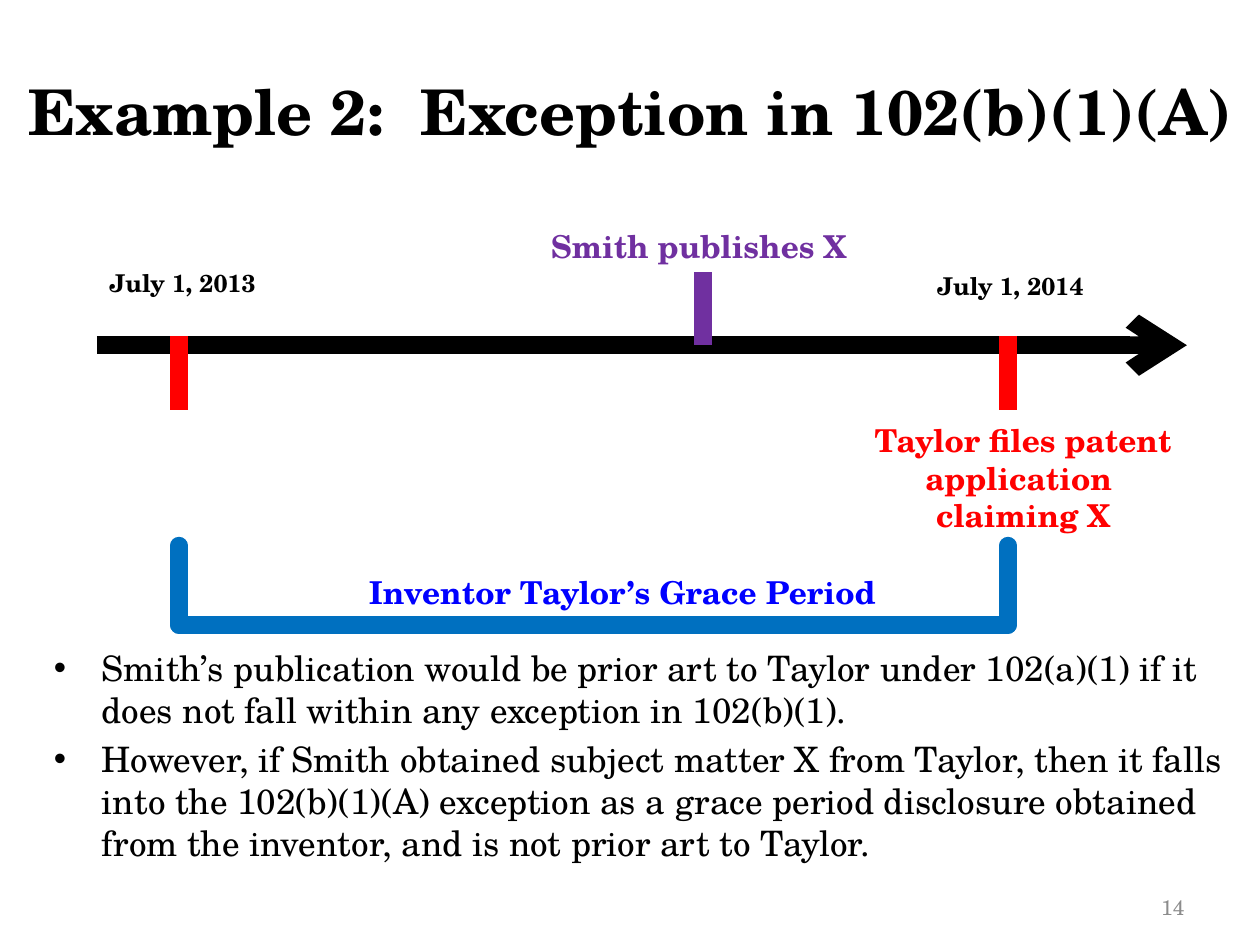
"""Build the patent grace period timeline slide."""
from lxml import etree
from pptx import Presentation
from pptx.dml.color import RGBColor
from pptx.enum.shapes import MSO_CONNECTOR
from pptx.enum.text import MSO_ANCHOR, PP_ALIGN
from pptx.oxml.ns import qn
from pptx.util import Inches, Pt

LEFT, CENTER, RIGHT = PP_ALIGN.LEFT, PP_ALIGN.CENTER, PP_ALIGN.RIGHT
TOP, MIDDLE, BOTTOM = MSO_ANCHOR.TOP, MSO_ANCHOR.MIDDLE, MSO_ANCHOR.BOTTOM
STRAIGHT = MSO_CONNECTOR.STRAIGHT

FONT = "TeX Gyre Schola"
BLACK, GRAY, RED = "000000", "8C8C8C", "FF0000"
PURPLE, BLUE, BRACKET_BLUE = "7030A0", "0000FF", "0070C0"

PERIOD_START, PUBLICATION, PERIOD_END = 1.42, 5.58, 8
AXIS_Y, TICK_TOP, TICK_LENGTH = 2.74, 2.67, 0.58
BRACKET_TOP, BRACKET_BASE = 4.33, 4.96

TITLE = "Example 2:  Exception in 102(b)(1)(A)"
PAGE_NUMBER = "14"
LABELS = [
    ("Smith publishes X", (4.17, 1.75, 2.75, 0.4), 18, PURPLE, CENTER),
    ("Taylor files patent application \vclaiming X", (6.83, 3.29, 2.58, 1.01), 18, RED, CENTER),
    ("July 1, 2013", (0.77, 2.08, 1.54, 0.34), 14, BLACK, LEFT),
    ("July 1, 2014", (7.34, 2.1, 1.54, 0.34), 14, BLACK, LEFT),
    ("Inventor Taylor’s Grace Period", (2.83, 4.5, 4.33, 0.4), 18, BLUE, LEFT),
]
POINTS = [
    "Smith’s publication would be prior art to Taylor under 102(a)(1) if it does not fall "
    "within any exception in 102(b)(1).",
    "However, if Smith obtained subject matter X from Taylor, then it falls into the "
    "102(b)(1)(A) exception as a grace period disclosure obtained from the inventor, "
    "and is not prior art to Taylor.",
]
TICKS = [
    (PERIOD_START, TICK_TOP, RED),
    (PERIOD_END, TICK_TOP, RED),
    (PUBLICATION, AXIS_Y - TICK_LENGTH, PURPLE),
]


def rgb(value):
    return RGBColor.from_string(value)


def add_bullet(paragraph, indent=0.38):
    properties = paragraph._p.get_or_add_pPr()
    properties.set("marL", str(Inches(indent)))
    properties.set("indent", str(-Inches(indent)))
    etree.SubElement(properties, qn("a:buFont"), typeface="Arial")
    etree.SubElement(properties, qn("a:buChar"), char="•")


def add_text(slide, text, place, size, color=BLACK, bold=False, align=LEFT,
             anchor=TOP, bullets=False, gap=0):
    frame = slide.shapes.add_textbox(*map(Inches, place)).text_frame
    frame.word_wrap = True
    frame.vertical_anchor = anchor
    frame.text = text
    for index, paragraph in enumerate(frame.paragraphs):
        paragraph.alignment = align
        if index:
            paragraph.space_before = Pt(gap)
        if bullets:
            add_bullet(paragraph)
        for run in paragraph.runs:
            run.font.name = FONT
            run.font.size = Pt(size)
            run.font.bold = bold
            run.font.color.rgb = rgb(color)


def add_line(slide, start, end, color, arrow=False, rounded=False):
    connector = slide.shapes.add_connector(STRAIGHT, *map(Inches, start + end))
    connector.line.color.rgb = rgb(color)
    connector.line.width = Pt(10)
    outline = connector.line._get_or_add_ln()
    if rounded:
        outline.set("cap", "rnd")
        etree.SubElement(outline, qn("a:round"))
    if arrow:
        etree.SubElement(outline, qn("a:tailEnd"), type="arrow")
    etree.SubElement(connector._element.spPr, qn("a:effectLst"))


def main():
    deck = Presentation()
    deck.slide_width, deck.slide_height = Inches(10), Inches(7.5)
    slide = deck.slides.add_slide(deck.slide_layouts[6])

    add_text(slide, TITLE, (0, 0.25, 10, 1.25), 36, bold=True, align=CENTER, anchor=MIDDLE)
    add_text(slide, PAGE_NUMBER, (7.17, 6.83, 2.33, 0.52), 12, GRAY, align=RIGHT, anchor=BOTTOM)

    add_line(slide, (0.77, AXIS_Y), (9.42, AXIS_Y), BLACK, arrow=True)
    for label, place, size, color, align in LABELS:
        add_text(slide, label, place, size, color, bold=True, align=align)
    for x, top, color in TICKS:
        add_line(slide, (x, top), (x, top + TICK_LENGTH), color)

    add_text(slide, "\n".join(POINTS), (0.33, 5.08, 9.54, 1.81), 20, bullets=True, gap=4)

    for x in (PERIOD_START, PERIOD_END):
        add_line(slide, (x, BRACKET_TOP), (x, BRACKET_BASE), BRACKET_BLUE, rounded=True)
    add_line(slide, (PERIOD_END, BRACKET_BASE), (PERIOD_START, BRACKET_BASE),
             BRACKET_BLUE, rounded=True)

    deck.save("out.pptx")


if __name__ == "__main__":
    main()
